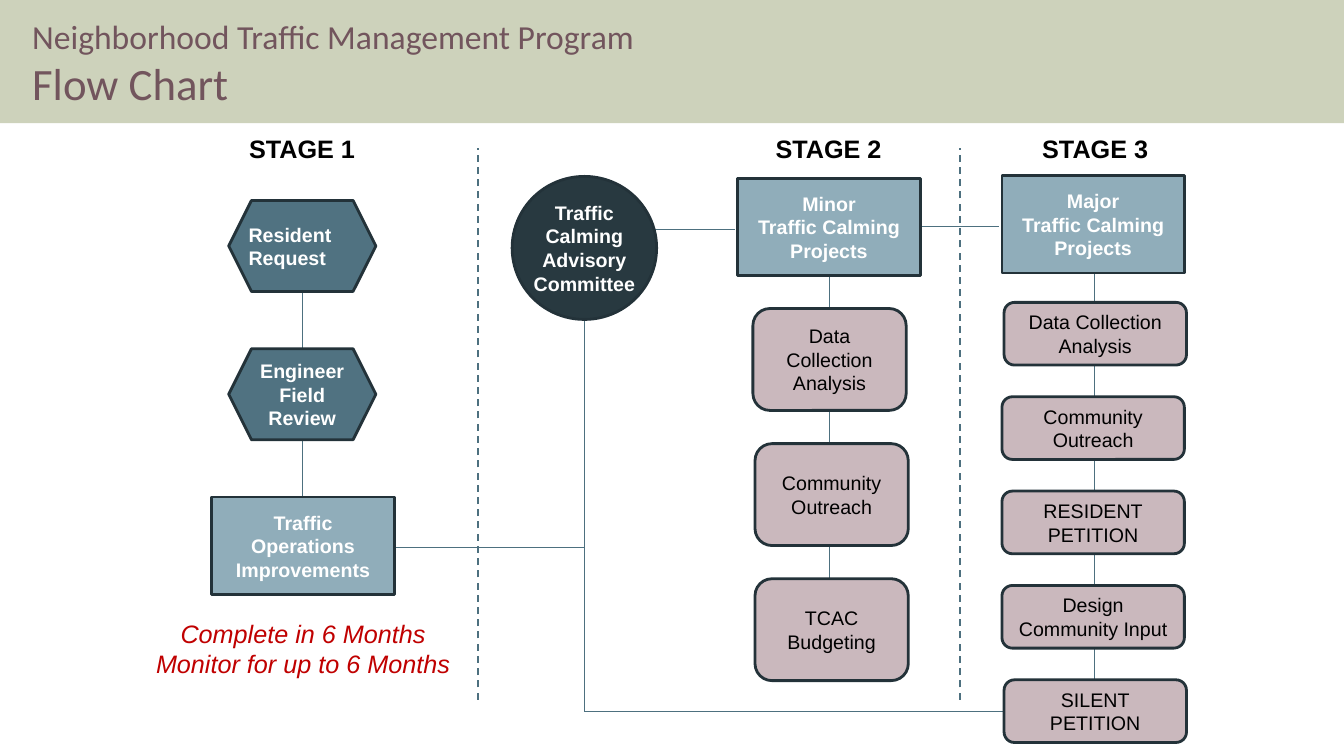
from dataclasses import dataclass
from itertools import pairwise

from lxml.etree import SubElement
from pptx import Presentation
from pptx.dml.color import RGBColor
from pptx.enum.dml import MSO_LINE
from pptx.enum.shapes import MSO_CONNECTOR, MSO_SHAPE as Preset
from pptx.enum.text import MSO_ANCHOR as Anchor, PP_ALIGN as Align
from pptx.oxml.ns import qn
from pptx.shapes.autoshape import Shape
from pptx.slide import Slide
from pptx.util import Pt

COLORS = {
    "banner": "CDD2BB", "title": "72555D", "request": "507281",
    "project": "90ADBA", "committee": "283940", "step": "CAB8BD",
    "outline": "233239", "link": "4D707F", "deadline": "C00000",
    "white": "FFFFFF", "black": "000000",
}


@dataclass(frozen=True)
class Node:
    text: str
    left: float
    top: float
    width: float
    height: float
    preset: Preset
    fill: str
    align: Align = Align.CENTER

    @property
    def bottom(self) -> float:
        return self.top + self.height


@dataclass(frozen=True)
class Caption:
    text: str
    center: float
    top: float
    width: float
    height: float
    color: str = "black"
    bold: bool = False
    italic: bool = False


@dataclass(frozen=True)
class Link:
    x1: float
    y1: float
    x2: float
    y2: float
    weight: float = 0.75
    dashed: bool = False


def color(name: str) -> RGBColor:
    return RGBColor.from_string(COLORS[name])


def write(shape: Shape, text: str, *, sizes: tuple[float, ...] = (14,),
          ink: str = "black", font: str = "Arial", bold: bool = False,
          italic: bool = False, align: Align = Align.CENTER,
          wrap: bool = False, inset: float = 0, top_inset: float = 0) -> None:
    """Write one paragraph per line; the last size serves all further lines."""
    frame = shape.text_frame
    frame.word_wrap = wrap
    frame.vertical_anchor = Anchor.MIDDLE
    frame.margin_left, frame.margin_top = Pt(inset), Pt(top_inset)
    frame.margin_right = frame.margin_bottom = 0
    for index, line in enumerate(text.split("\n")):
        paragraph = frame.add_paragraph() if index else frame.paragraphs[0]
        paragraph.alignment = align
        run = paragraph.add_run()
        run.text = line
        run.font.name, run.font.size = font, Pt(sizes[min(index, len(sizes) - 1)])
        run.font.bold, run.font.italic = bold, italic
        run.font.color.rgb = color(ink)


def draw_banner(slide: Slide) -> None:
    banner = slide.shapes.add_shape(Preset.RECTANGLE, 0, Pt(-2), Pt(960), Pt(90))
    banner.shadow.inherit = False
    banner.fill.solid()
    banner.fill.fore_color.rgb = color("banner")
    banner.line.fill.background()
    write(banner, "Neighborhood Traffic Management Program\nFlow Chart",
          sizes=(24, 32), ink="title", font="Calibri", align=Align.LEFT,
          wrap=True, inset=23, top_inset=3.6)


def draw_node(slide: Slide, node: Node) -> None:
    box = slide.shapes.add_shape(node.preset, Pt(node.left), Pt(node.top),
                                 Pt(node.width), Pt(node.height))
    box.shadow.inherit = False
    box.fill.solid()
    box.fill.fore_color.rgb = color(node.fill)
    box.line.color.rgb = color("outline")
    box.line.width = Pt(2)
    is_step = node.fill == "step"
    write(box, node.text, ink="black" if is_step else "white",
          bold=not is_step, align=node.align)


def draw_caption(slide: Slide, caption: Caption) -> None:
    box = slide.shapes.add_textbox(Pt(caption.center - caption.width / 2),
                                   Pt(caption.top), Pt(caption.width),
                                   Pt(caption.height))
    write(box, caption.text, sizes=(18,), ink=caption.color, wrap=True,
          bold=caption.bold, italic=caption.italic)


def draw_link(slide: Slide, link: Link) -> None:
    line = slide.shapes.add_connector(MSO_CONNECTOR.STRAIGHT, Pt(link.x1),
                                      Pt(link.y1), Pt(link.x2), Pt(link.y2))
    line.line.color.rgb = color("link")
    line.line.width = Pt(link.weight)
    if link.dashed:
        line.line.dash_style = MSO_LINE.DASH
    SubElement(line._element.spPr, qn("a:effectLst"))


def project(text: str, left: float, top: float) -> Node:
    return Node(text, left, top, 130.3, 69.8, Preset.RECTANGLE, "project")


def steps(labels: list[str], lefts: list[float], top: float, pitch: float,
          width: float, height: float) -> list[Node]:
    """Stack rounded step boxes at an even pitch."""
    return [Node(label, left, top + row * pitch, width, height,
                 Preset.ROUNDED_RECTANGLE, "step")
            for row, (label, left) in enumerate(zip(labels, lefts))]


REQUESTS = [
    Node(text, 163.4, top, 105.1, 65, Preset.HEXAGON, "request", align)
    for text, top, align in (("Resident\nRequest", 143.2, Align.LEFT),
                             ("Engineer\nField\nReview", 249.1, Align.CENTER))
]
STAGE_1 = REQUESTS + [project("Traffic\nOperations\nImprovements", 151.3, 355)]
STAGE_2 = [project("Minor\nTraffic Calming\nProjects", 527, 127.3)] + steps(
    ["Data\nCollection\nAnalysis", "Community\nOutreach", "TCAC\nBudgeting"],
    [537.8, 539.3, 539.3], 220.4, 96.5, 109.5, 72.8)
STAGE_3 = [project("Major\nTraffic Calming\nProjects", 715.7, 125.3)] + steps(
    ["Data Collection\nAnalysis", "Community\nOutreach", "RESIDENT\nPETITION",
     "Design\nCommunity Input", "SILENT\nPETITION"],
    [717.2, 715.7, 715.7, 715.7, 717.2], 216, 67.4, 130.3, 44.8)
COMMITTEE = Node("Traffic\nCalming\nAdvisory\nCommittee", 365.8, 126, 103.2, 102.2,
                 Preset.OVAL, "committee")
TRUNKS = [(216.2, STAGE_1), (592.5, STAGE_2), (781.7, STAGE_3)]
COMMITTEE_X = 417.5

LINKS = [Link(x, above.bottom, x, below.top)
         for x, stage in TRUNKS for above, below in pairwise(stage)]
LINKS += [Link(x, 499.7, x, 105.8, 1.25, True) for x in (341.3, 685.5)]
LINKS += [
    Link(462.2, 164, 525, 164),
    Link(658, 161.7, 713.5, 161.7),
    Link(282, 391, COMMITTEE_X, 391),
    Link(COMMITTEE_X, COMMITTEE.bottom, COMMITTEE_X, 508.2),
    Link(COMMITTEE_X, 508.2, 717.2, 508.2),
]
CAPTIONS = [Caption(f"STAGE {number}", center, 91.6, 92, 29, bold=True)
            for number, center in enumerate((215.8, 591.8, 782.3), 1)]
CAPTIONS.append(Caption("Complete in 6 Months\nMonitor for up to 6 Months",
                        216.5, 437.5, 227, 51, "deadline", italic=True))


def main() -> None:
    deck = Presentation()
    deck.slide_width, deck.slide_height = Pt(960), Pt(540)
    slide = deck.slides.add_slide(deck.slide_layouts[6])
    draw_banner(slide)
    for link in LINKS:
        draw_link(slide, link)
    for node in STAGE_1 + STAGE_2 + STAGE_3 + [COMMITTEE]:
        draw_node(slide, node)
    for caption in CAPTIONS:
        draw_caption(slide, caption)
    deck.save("out.pptx")


if __name__ == "__main__":
    main()
